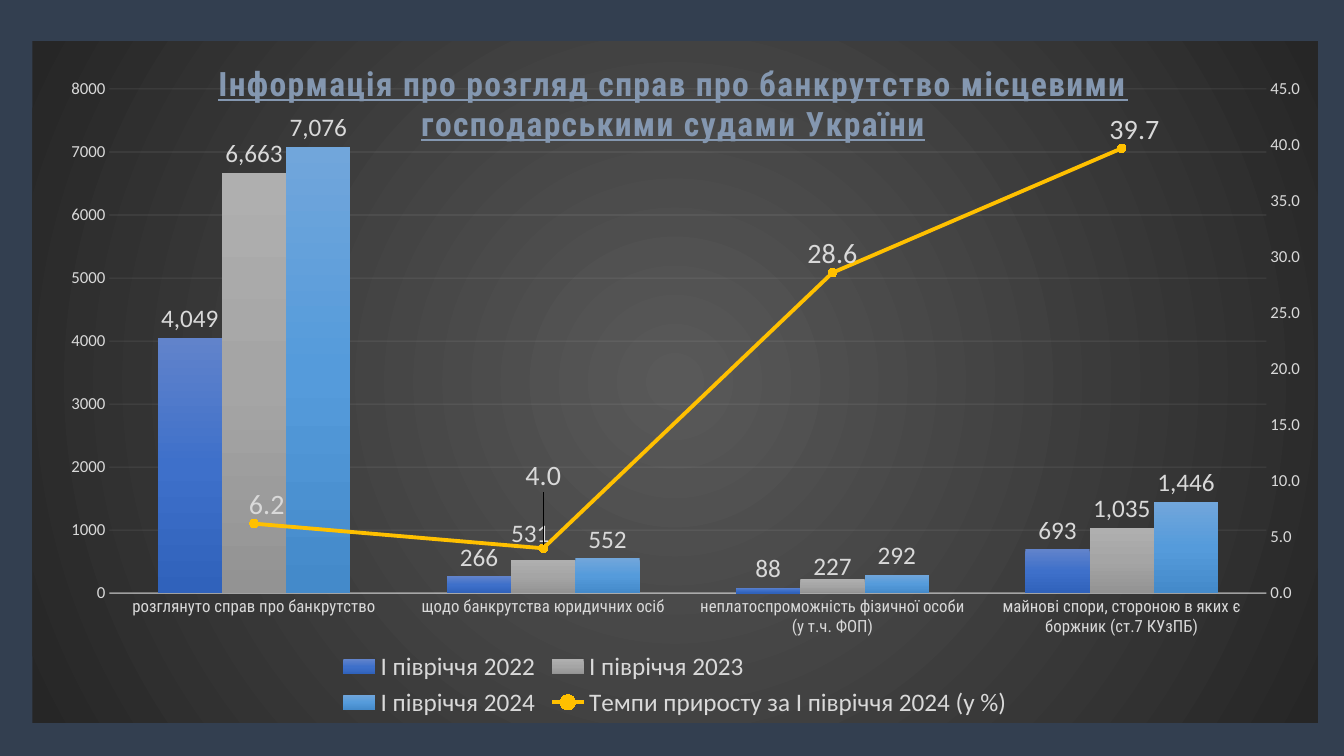
from copy import deepcopy

from pptx import Presentation
from pptx.chart import data as chart_data
from pptx.dml.color import RGBColor
from pptx.enum import chart as chart_enum
from pptx.oxml import parse_xml
from pptx.oxml.ns import nsdecls
from pptx.util import Inches, Pt

THEME = {
    "background": "333F50", "text": "D9D9D9", "title": "8497B0",
    "rule": "F2F2F2", "trend": "FFC000",
    "area": ((0, "595959"), (100, "262626")),
    "bars": (((0, "6183CB"), (50, "3E70CA"), (100, "3062BB")),
             ((0, "AFAFAF"), (50, "A5A5A5"), (100, "939393")),
             ((0, "71A6DB"), (50, "559BDB"), (100, "448ACA"))),
    "body_font": "Calibri", "heading_font": "Roboto Condensed",
    "axis_size": 12, "label_size": 18, "trend_size": 20, "title_size": 24,
}
CATEGORIES = (
    "розглянуто справ про банкрутство",
    "щодо банкрутства юридичних осіб",
    "неплатоспроможність фізичної особи (у т.ч. ФОП)",
    "майнові спори, стороною в яких є боржник (ст.7 КУзПБ)",
)
SERIES = {
    "І півріччя 2022": (4049, 266, 88, 693),
    "І півріччя 2023": (6663, 531, 227, 1035),
    "І півріччя 2024": (7076, 552, 292, 1446),
    "Темпи приросту за І півріччя 2024 (у %)": (6.2, 4.0, 28.6, 39.7),
}
# Label shifts as shares of the chart: (series, point) -> (x, y)
LABEL_SHIFTS = {
    (1, 1): (-0.01, -0.01), (1, 2): (0, 0.01),
    (3, 0): (0.01, 0.01), (3, 1): (0, -0.07),
    (3, 2): (0, 0.01), (3, 3): (0.01, 0.01),
}


def set_layout(parent, index, **settings):
    """Give a chart part a manual layout as its child number index."""
    for old in parent.xpath("c:layout"):
        parent.remove(old)
    items = "".join(f'<c:{name} val="{value}"/>' for name, value in settings.items())
    parent.insert(index, parse_xml(
        f'<c:layout {nsdecls("c")}><c:manualLayout>{items}</c:manualLayout></c:layout>'))


def gradient(stops, direction):
    """Return a gradient fill element."""
    items = "".join(f'<a:gs pos="{pos * 1000}"><a:srgbClr val="{color}"/></a:gs>'
                    for pos, color in stops)
    return parse_xml(f'<a:gradFill {nsdecls("a")}><a:gsLst>{items}</a:gsLst>'
                     f'{direction}</a:gradFill>')


# Slide
presentation = Presentation()
presentation.slide_width, presentation.slide_height = Inches(13.33), Inches(7.5)
slide = presentation.slides.add_slide(presentation.slide_layouts[6])
slide.background.fill.solid()
slide.background.fill.fore_color.rgb = RGBColor.from_string(THEME["background"])

# Chart
table = chart_data.CategoryChartData()
table.categories = CATEGORIES
for name, values in SERIES.items():
    table.add_series(name, values)
chart = slide.shapes.add_chart(
    chart_enum.XL_CHART_TYPE.COLUMN_CLUSTERED,
    Inches(0.32), Inches(0.41), Inches(12.75), Inches(6.76), table).chart
chart_space = chart.element
plot_area = chart_space.xpath("c:chart/c:plotArea")[0]
set_layout(plot_area, 0, layoutTarget="inner", xMode="edge", yMode="edge",
           x=0.06, y=0.07, w=0.9, h=0.74)
columns = chart.plots[0]
columns.gap_width, columns.overlap, columns.vary_by_categories = 150, 0, False

# Chart area
area = parse_xml(f'<c:spPr {nsdecls("c", "a")}><a:ln><a:noFill/></a:ln></c:spPr>')
area.insert(0, gradient(THEME["area"], '<a:path path="circle"><a:fillToRect '
                        'l="50000" t="50000" r="50000" b="50000"/></a:path>'))
chart_space.xpath("c:chart")[0].addnext(area)

# Title
chart.has_title = True
title_frame = chart.chart_title.text_frame
title_frame.text = ("Інформація про розгляд справ про банкрутство місцевими "
                    "господарськими судами України")
title_run = title_frame.paragraphs[0].runs[0]
for name, value in {"size": Pt(THEME["title_size"]), "bold": True, "underline": True,
                    "name": THEME["heading_font"]}.items():
    setattr(title_run.font, name, value)
title_run.font.color.rgb = RGBColor.from_string(THEME["title"])
chart_space.xpath("c:chart/c:title//a:rPr")[0].set("spc", "100")
title = chart_space.xpath("c:chart/c:title")[0]
set_layout(title, 1, xMode="edge", yMode="edge", x=0.14, y=0.02)
title.xpath("c:overlay")[0].set("val", "1")

# Legend
chart.has_legend = True
chart.legend.position = chart_enum.XL_LEGEND_POSITION.BOTTOM
chart.legend.include_in_layout = False

# Axes
category_axis, value_axis = chart.category_axis, chart.value_axis
value_axis.minimum_scale, value_axis.maximum_scale, value_axis.major_unit = 0, 8000, 1000
value_axis.has_major_gridlines = True
for axis in (category_axis, value_axis):
    axis.major_tick_mark = axis.minor_tick_mark = chart_enum.XL_TICK_MARK.NONE
value_axis.format.line.fill.background()
value_axis.tick_labels.number_format = "0"
value_axis.tick_labels.number_format_is_linked = False
for line, width, opacity in ((category_axis.format.line, 1, 54),
                             (value_axis.major_gridlines.format.line, 0.75, 10)):
    line.width = Pt(width)
    line.color.rgb = RGBColor.from_string(THEME["rule"])
    owner = "c:catAx/c:spPr" if opacity == 54 else "c:valAx/c:majorGridlines/c:spPr"
    plot_area.xpath(f"{owner}//a:srgbClr")[0].append(
        parse_xml(f'<a:alpha {nsdecls("a")} val="{opacity * 1000}"/>'))

# Fonts of legend and axes
for font, face, size in (
        (chart.legend.font, "body_font", "label_size"),
        (category_axis.tick_labels.font, "heading_font", "axis_size"),
        (value_axis.tick_labels.font, "body_font", "axis_size")):
    font.name, font.size = THEME[face], Pt(THEME[size])
    font.color.rgb = RGBColor.from_string(THEME["text"])

# Growth rate becomes a line on a right-hand axis
line_chart = parse_xml(
    f'<c:lineChart {nsdecls("c")}><c:grouping val="standard"/><c:varyColors val="0"/>'
    '<c:marker val="1"/><c:axId val="5001"/><c:axId val="5002"/></c:lineChart>')
growth = plot_area.xpath("c:barChart/c:ser")[3]
for flag in growth.xpath("c:invertIfNegative"):
    growth.remove(flag)
line_chart.insert(2, growth)
plot_area.xpath("c:barChart")[0].addnext(line_chart)
hidden_axis = deepcopy(plot_area.xpath("c:catAx")[0])
right_axis = deepcopy(plot_area.xpath("c:valAx")[0])
right_axis.remove(right_axis.xpath("c:majorGridlines")[0])
for axis, settings in (
        (hidden_axis, {"c:axId": "5001", "c:crossAx": "5002", "c:delete": "1"}),
        (right_axis, {"c:axId": "5002", "c:crossAx": "5001", "c:axPos": "r",
                      "c:crosses": "max", "c:scaling/c:max": "45", "c:majorUnit": "5"})):
    for tag, value in settings.items():
        axis.xpath(tag)[0].set("val", value)
right_axis.xpath("c:numFmt")[0].set("formatCode", "0.0")
plot_area.xpath("c:valAx")[0].addnext(right_axis)
right_axis.addnext(hidden_axis)

# Series fills and labels
all_series = [series for plot in chart.plots for series in plot.series]
for index, series in enumerate(all_series):
    is_line = index == 3
    element = plot_area.xpath(".//c:ser")[index]
    if is_line:
        series.smooth = False
        series.format.line.width = Pt(2.75)
        series.format.line.color.rgb = RGBColor.from_string(THEME["trend"])
        series.marker.style, series.marker.size = chart_enum.XL_MARKER_STYLE.CIRCLE, 6
        series.marker.format.fill.solid()
        series.marker.format.fill.fore_color.rgb = RGBColor.from_string(THEME["trend"])
        series.marker.format.line.color.rgb = RGBColor.from_string(THEME["trend"])
    else:
        series.format.fill.solid()
        solid = element.xpath("c:spPr/a:solidFill")[0]
        solid.getparent().replace(
            solid, gradient(THEME["bars"][index], '<a:lin ang="5400000" scaled="0"/>'))
    position = chart_enum.XL_LABEL_POSITION
    place = position.ABOVE if is_line else position.OUTSIDE_END
    number_format = "0.0" if is_line else "#,##0"
    labels = series.data_labels
    labels.show_value = True
    labels.number_format, labels.number_format_is_linked = number_format, False
    shifts = {key[1]: shift for key, shift in LABEL_SHIFTS.items() if key[0] == index}
    for label in [labels] + [series.points[point].data_label for point in shifts]:
        label.position = place
        label.font.name = THEME["body_font"]
        label.font.size = Pt(THEME["trend_size" if is_line else "label_size"])
        label.font.color.rgb = RGBColor.from_string(THEME["text"])
    for point, (x, y) in shifts.items():
        label = element.xpath(f"c:dLbls/c:dLbl[c:idx/@val='{point}']")[0]
        set_layout(label, 1, x=x, y=y)
        label.insert(2, parse_xml(f'<c:numFmt {nsdecls("c")} '
                                  f'formatCode="{number_format}" sourceLinked="0"/>'))

presentation.save("out.pptx")
